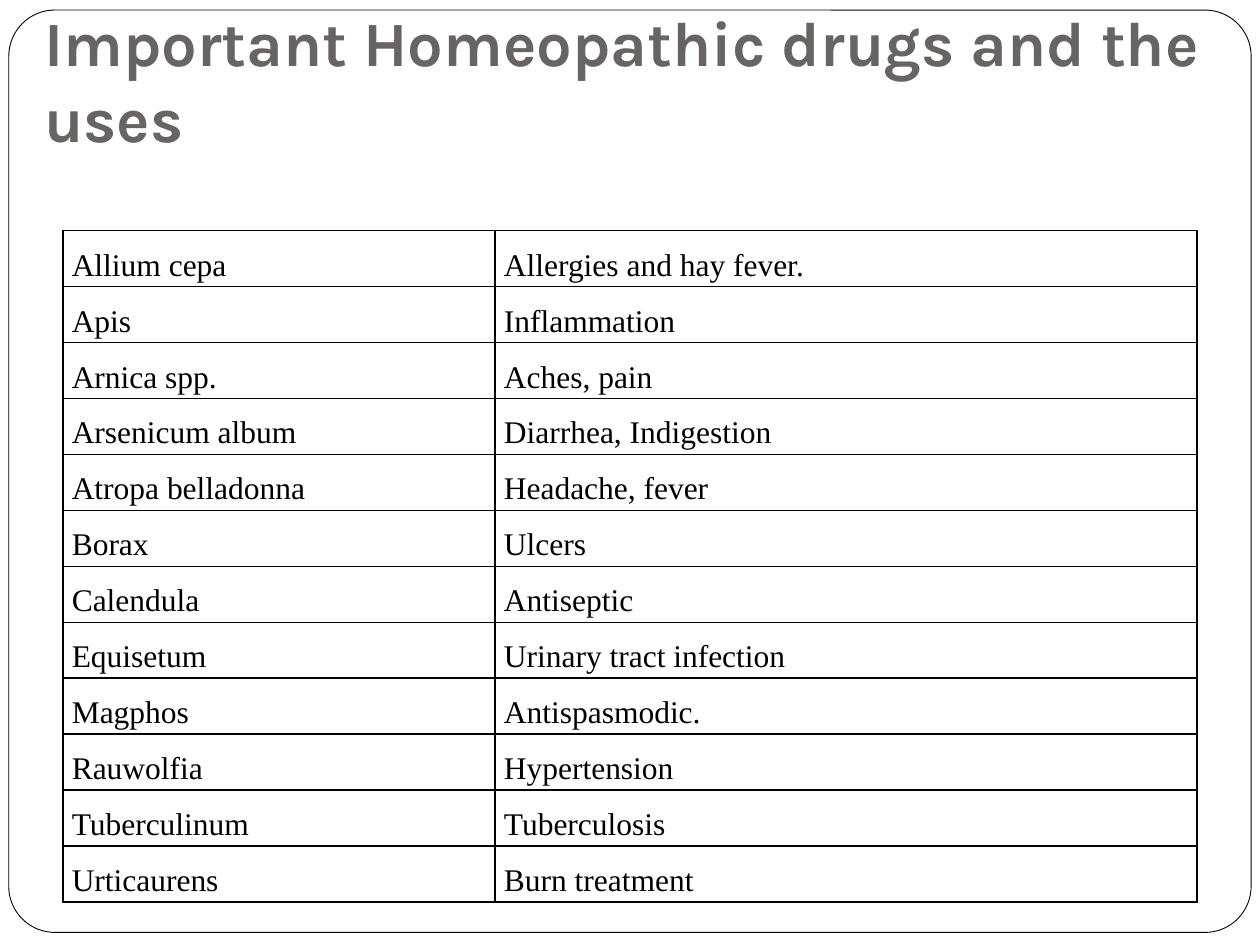
from pptx import Presentation
from pptx.dml.color import RGBColor
from pptx.enum.shapes import MSO_SHAPE
from pptx.enum.text import MSO_ANCHOR, MSO_AUTO_SIZE, PP_ALIGN
from pptx.oxml import parse_xml
from pptx.oxml.ns import nsdecls
from pptx.util import Inches, Pt

COLORS = {"paper": "FFFFFF", "ink": "000000", "title": "696464"}

DRUG_USES = [
    ("Allium cepa", "Allergies and hay fever."),
    ("Apis", "Inflammation"),
    ("Arnica spp.", "Aches, pain"),
    ("Arsenicum album", "Diarrhea, Indigestion"),
    ("Atropa belladonna", "Headache, fever"),
    ("Borax", "Ulcers"),
    ("Calendula", "Antiseptic"),
    ("Equisetum", "Urinary tract infection"),
    ("Magphos", "Antispasmodic."),
    ("Rauwolfia", "Hypertension"),
    ("Tuberculinum", "Tuberculosis"),
    ("Urticaurens", "Burn treatment"),
]


def color(name):
    return RGBColor.from_string(COLORS[name])


def apply_format(target, values):
    for name, value in values.items():
        setattr(target, name, value)


class SlideBuilder:
    title_font = {"name": "Karla", "size": Pt(36), "bold": True}
    cell_font = {"name": "Times New Roman", "size": Pt(18), "bold": False}
    title_frame = {
        "word_wrap": True, "auto_size": MSO_AUTO_SIZE.NONE,
        "vertical_anchor": MSO_ANCHOR.BOTTOM,
        "margin_left": Inches(0.1), "margin_right": Inches(0.1),
        "margin_top": Inches(0.05), "margin_bottom": Inches(0.1),
    }
    cell_margins = {
        "margin_left": Inches(0.07), "margin_right": Inches(0.07),
        "margin_top": 0, "margin_bottom": 0,
    }
    cell_paragraph = {"alignment": PP_ALIGN.JUSTIFY, "line_spacing": 1.5}

    def __init__(self, slide):
        self.slide = slide

    def add_text(self, paragraph, text, font, color_name):
        run = paragraph.add_run()
        run.text = text
        apply_format(run.font, font)
        run.font.color.rgb = color(color_name)

    def frame(self, left, top, width, height):
        shape = self.slide.shapes.add_shape(
            MSO_SHAPE.ROUNDED_RECTANGLE, left, top, width, height)
        shape.adjustments[0] = 0.05
        shape.shadow.inherit = False
        shape.fill.solid()
        shape.fill.fore_color.rgb = color("paper")
        shape.line.color.rgb = color("ink")
        shape.line.width = Pt(0.5)
        # Send behind the title placeholder
        shape._element.getparent().insert(2, shape._element)

    def title(self, text, left, top, width, height):
        shape = self.slide.shapes.title
        apply_format(shape, {"left": left, "top": top,
                             "width": width, "height": height})
        apply_format(shape.text_frame, self.title_frame)
        paragraph = shape.text_frame.paragraphs[0]
        paragraph.alignment = PP_ALIGN.LEFT
        self.add_text(paragraph, text, self.title_font, "title")

    def borders(self, cell):
        properties = cell._tc.get_or_add_tcPr()
        for position, side in enumerate(("lnL", "lnR", "lnT", "lnB")):
            properties.insert(position, parse_xml(
                f'<a:{side} {nsdecls("a")} w="{Pt(1)}"><a:solidFill>'
                f'<a:srgbClr val="{COLORS["ink"]}"/></a:solidFill></a:{side}>'))

    def table(self, rows, left, top, column_widths, height):
        table = self.slide.shapes.add_table(
            len(rows), len(column_widths), left, top,
            sum(column_widths), height).table
        apply_format(table, {"first_row": False, "horz_banding": False})
        for column, width in zip(table.columns, column_widths):
            column.width = width
        for row_index, row in enumerate(rows):
            for column_index, text in enumerate(row):
                cell = table.cell(row_index, column_index)
                apply_format(cell, self.cell_margins)
                cell.fill.background()
                self.borders(cell)
                paragraph = cell.text_frame.paragraphs[0]
                apply_format(paragraph, self.cell_paragraph)
                self.add_text(paragraph, text, self.cell_font, "ink")


def main():
    presentation = Presentation()
    presentation.slide_width = Inches(10)
    presentation.slide_height = Inches(7.5)
    builder = SlideBuilder(
        presentation.slides.add_slide(presentation.slide_layouts[5]))

    # Rounded page frame
    builder.frame(Inches(0.07), Inches(0.08), Inches(9.86), Inches(7.32))

    # Title
    builder.title("Important Homeopathic drugs and the uses",
                  Inches(0.25), Inches(0.3), Inches(9.5), Inches(1.03))

    # Drugs and their uses
    builder.table(DRUG_USES, Inches(0.5), Inches(1.83),
                  [Inches(3.43), Inches(5.57)], Inches(5.33))

    presentation.save("out.pptx")


if __name__ == "__main__":
    main()
